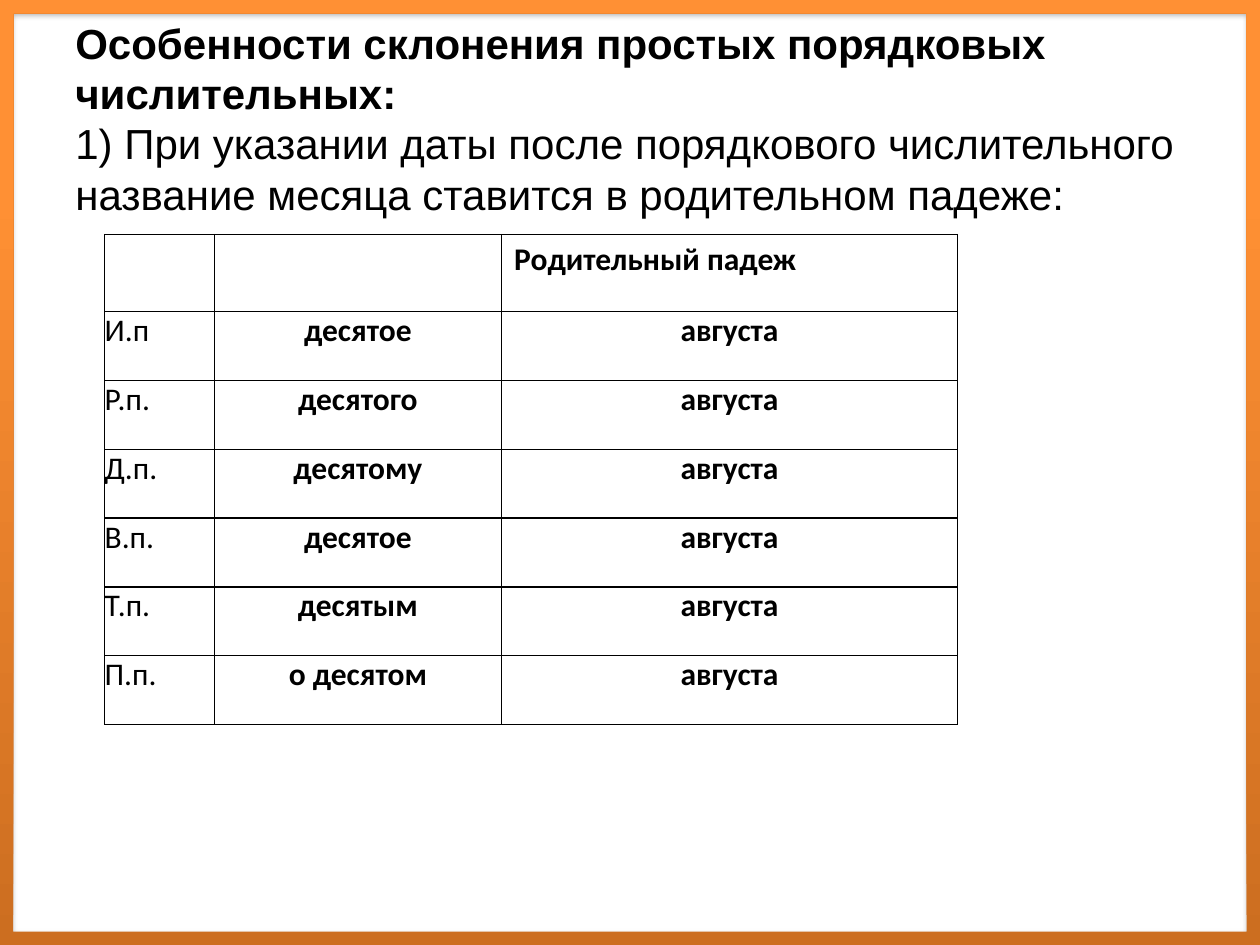
from dataclasses import dataclass

from lxml.etree import SubElement
from pptx import Presentation
from pptx.dml.color import RGBColor
from pptx.enum.shapes import MSO_SHAPE
from pptx.enum.text import MSO_ANCHOR, PP_ALIGN
from pptx.oxml import parse_xml
from pptx.oxml.ns import nsdecls, qn
from pptx.slide import Slide
from pptx.util import Pt

COLORS = {
    "ink": "000000",
    "paper": "FFFFFF",
    "frame_dark": "CC6E20",
    "frame_mid": "FF9034",
    "frame_light": "FF9136",
}
COLUMN_WIDTHS = (62.6, 164.2, 260.6)
HEADER_HEIGHT, ROW_HEIGHT = 44, 39.4


@dataclass
class Declension:
    case: str
    numeral: str
    month: str = "августа"


DECLENSIONS = [
    Declension("И.п", "десятое"),
    Declension("Р.п.", "десятого"),
    Declension("Д.п.", "десятому"),
    Declension("В.п.", "десятое"),
    Declension("Т.п.", "десятым"),
    Declension("П.п.", "о десятом"),
]


def write(paragraph, text: str, *, font="Calibri", size=18, bold=False,
          align=PP_ALIGN.LEFT) -> None:
    paragraph.alignment = align
    run = paragraph.add_run()
    run.text = text
    run.font.name = font
    run.font.size = Pt(size)
    run.font.bold = bold
    run.font.color.rgb = RGBColor.from_string(COLORS["ink"])


def add_frame(slide: Slide, width: int, height: int) -> None:
    shape = slide.shapes.add_shape(MSO_SHAPE.FRAME, 0, 0, width, height)
    shape.adjustments[0] = 0.014
    shape.line.fill.background()
    # Three-stop gradient, running from the bottom up
    shape.fill.gradient()
    shape.fill.gradient_angle = 90
    stops = shape.fill._fill._gradFill.find(qn("a:gsLst"))
    for stop in list(stops):
        stops.remove(stop)
    for percent, name in ((0, "frame_dark"), (80, "frame_mid"), (100, "frame_light")):
        stop = SubElement(stops, qn("a:gs"), pos=str(percent * 1000))
        SubElement(stop, qn("a:srgbClr"), val=COLORS[name])
    # Soft shadow falling downwards
    shape._element.spPr.append(parse_xml(
        f'<a:effectLst {nsdecls("a")}><a:outerShdw blurRad="{Pt(3.1)}" '
        f'dist="{Pt(1.8)}" dir="5400000" rotWithShape="0">'
        f'<a:srgbClr val="{COLORS["ink"]}"><a:alpha val="35000"/></a:srgbClr>'
        '</a:outerShdw></a:effectLst>'))


def add_title(slide: Slide) -> None:
    text_frame = slide.shapes.add_textbox(Pt(36), Pt(21.6), Pt(648), Pt(118)).text_frame
    text_frame.word_wrap = True
    text_frame.vertical_anchor = MSO_ANCHOR.MIDDLE
    text_frame.margin_bottom = Pt(30)
    paragraph = text_frame.paragraphs[0]
    write(paragraph, "Особенности склонения простых порядковых числительных:",
          font="Arial", size=24, bold=True)
    paragraph.add_line_break()
    write(paragraph, "1) При указании даты после порядкового числительного "
          "название месяца ставится в родительном падеже:", font="Arial", size=24)


def style_cell(cell) -> None:
    properties = cell._tc.get_or_add_tcPr()
    for side in ("lnL", "lnR", "lnT", "lnB"):
        line = SubElement(properties, qn(f"a:{side}"), w=str(Pt(0.75)))
        fill = SubElement(line, qn("a:solidFill"))
        SubElement(fill, qn("a:srgbClr"), val=COLORS["ink"])
    cell.fill.background()


def add_declension_table(slide: Slide) -> None:
    row_count = len(DECLENSIONS) + 1
    table = slide.shapes.add_table(
        row_count, len(COLUMN_WIDTHS), Pt(59.8), Pt(133.9), Pt(sum(COLUMN_WIDTHS)),
        Pt(HEADER_HEIGHT + ROW_HEIGHT * len(DECLENSIONS))).table
    table.first_row = table.horz_banding = False
    for column, width in zip(table.columns, COLUMN_WIDTHS):
        column.width = Pt(width)
    for index, row in enumerate(table.rows):
        row.height = Pt(ROW_HEIGHT if index else HEADER_HEIGHT)
    for cell in table.iter_cells():
        style_cell(cell)

    # Header
    write(table.cell(0, 2).text_frame.paragraphs[0], "Родительный падеж", bold=True)

    # One row per case
    for row, entry in enumerate(DECLENSIONS, start=1):
        for column, text in enumerate((entry.case, entry.numeral, entry.month)):
            cell = table.cell(row, column)
            cell.margin_left = cell.margin_right = 0
            cell.margin_top = cell.margin_bottom = 0
            write(cell.text_frame.paragraphs[0], text, bold=column > 0,
                  align=PP_ALIGN.CENTER if column else PP_ALIGN.LEFT)


def main() -> None:
    presentation = Presentation()
    presentation.slide_width, presentation.slide_height = Pt(720), Pt(540)
    slide = presentation.slides.add_slide(presentation.slide_layouts[6])
    background = slide.background.fill
    background.solid()
    background.fore_color.rgb = RGBColor.from_string(COLORS["paper"])
    add_frame(slide, presentation.slide_width, presentation.slide_height)
    add_title(slide)
    add_declension_table(slide)
    presentation.save("out.pptx")


if __name__ == "__main__":
    main()
